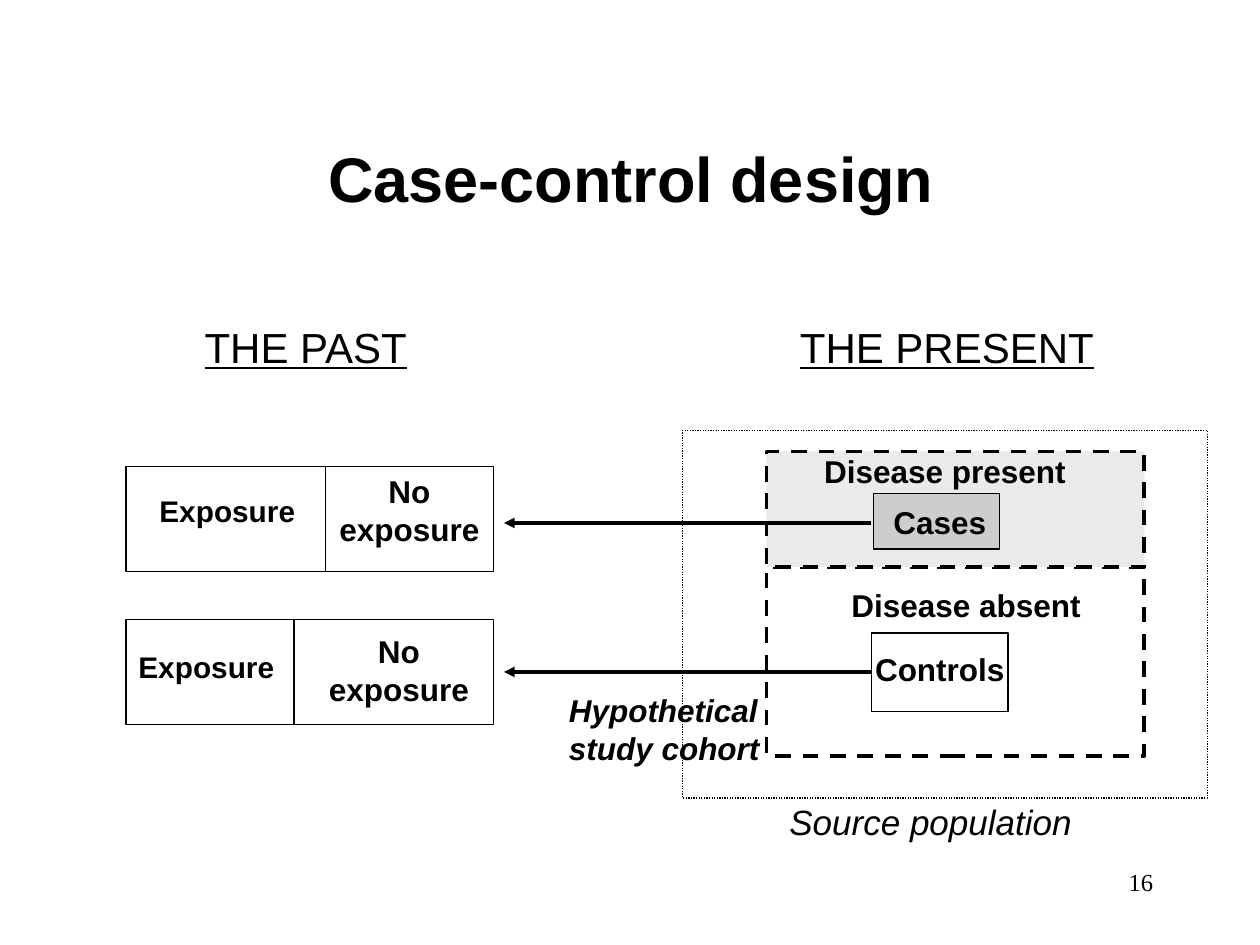
from pptx import Presentation
from pptx.dml.color import RGBColor
from pptx.enum.dml import MSO_LINE
from pptx.enum.shapes import MSO_CONNECTOR, MSO_SHAPE
from pptx.enum.text import MSO_ANCHOR, PP_ALIGN
from pptx.oxml.ns import qn
from pptx.util import Inches, Pt
from lxml.etree import SubElement

# Theme: colours, fonts, type styles and line widths
THEME = {
    "ink": "000000", "present": "EAEAEA", "cases": "B2B2B2", "cases_alpha": 50,
    "thin": 0.75, "arrow": 2, "cohort": 2.25,
    "styles": {
        "title": {"name": "Arial", "size": Pt(36), "bold": True},
        "heading": {"name": "Arial", "size": Pt(24), "underline": True},
        "exposure": {"name": "Arial", "size": Pt(17), "bold": True},
        "label": {"name": "Arial", "size": Pt(18), "bold": True},
        "cohort": {"name": "Arial", "size": Pt(18), "bold": True, "italic": True},
        "source": {"name": "Arial", "size": Pt(20), "italic": True},
        "number": {"name": "Times New Roman", "size": Pt(14)},
    },
}
LEFT, CENTER, RIGHT = PP_ALIGN.LEFT, PP_ALIGN.CENTER, PP_ALIGN.RIGHT
COLS, ROWS = 120, 90  # grid over the slide; every place below is in its cells

# Boxes: (left, top, width, height), line width, dash, fill, alpha
BOXES = [
    ((73, 54, 36, 18), "cohort", MSO_LINE.DASH, None, None),
    ((65, 41, 50, 35), "thin", MSO_LINE.ROUND_DOT, None, None),
    ((73, 43, 36, 11), "cohort", MSO_LINE.DASH, "present", None),
    ((83.2, 47, 12, 5.3), "thin", None, "cases", "cases_alpha"),
    ((83, 60.3, 13, 7.5), "thin", None, None, None),
]

# Past groups: top row, column of the divider, row of the arrow
PAST_LEFT, PAST_WIDTH, PAST_HEIGHT = 12, 35, 10
PAST = [(44.4, 31, 49.8), (59, 28, 64)]
ARROW_FROM, ARROW_TO = 83, 48

# Texts: words, (left, top, width, height), style, alignment, line spacing
TEXTS = [
    ("Case-control design", (11.9, 10.7, 96.4, 12.4), "title", CENTER, None),
    ("THE PAST", (18.3, 30, 27.7, 6), "heading", LEFT, None),
    ("THE PRESENT", (75, 30, 34, 6), "heading", LEFT, None),
    ("Exposure", (14, 46.3, 16, 4.5), "exposure", LEFT, None),
    ("No exposure", (30, 44.4, 18, 8.4), "label", CENTER, None),
    ("Exposure", (12, 61.2, 16, 4.5), "exposure", LEFT, None),
    ("No exposure", (29, 59.6, 18, 8.4), "label", CENTER, None),
    ("Disease present", (77, 43.2, 26, 4.1), "label", CENTER, 0.8),
    ("Cases", (82, 48, 15, 4.1), "label", CENTER, 0.8),
    ("Disease absent", (79, 55.9, 26, 4.1), "label", CENTER, 0.8),
    ("Controls", (82, 62, 15, 4.1), "label", CENTER, 0.8),
    ("Hypothetical study cohort", (53, 65.2, 21, 8.4), "cohort", LEFT, None),
    ("Source population", (74, 75.6, 31, 5.2), "source", LEFT, None),
    ("16", (86, 82, 25, 6), "number", RIGHT, None),
]

prs = Presentation()
prs.slide_width, prs.slide_height = Inches(10), Inches(7.5)
s = prs.slides.add_slide(prs.slide_layouts[6])


def place(*cells):
    units = (prs.slide_width / COLS, prs.slide_height / ROWS) * 2
    return [round(c * u) for c, u in zip(cells, units)]


def color(key):
    return RGBColor.from_string(THEME[key])


def style_line(sp, width, dash=None):
    sp.line.color.rgb = color("ink")
    sp.line.width = Pt(THEME[width])
    if dash:
        sp.line.dash_style = dash


def add_box(at, width="thin", dash=None, fill=None, alpha=None):
    sp = s.shapes.add_shape(MSO_SHAPE.RECTANGLE, *place(*at))
    sp.shadow.inherit = False
    style_line(sp, width, dash)
    if not fill:
        sp.fill.background()
        return
    sp.fill.solid()
    sp.fill.fore_color.rgb = color(fill)
    if alpha:
        clr = sp.fill._xPr.find(".//" + qn("a:srgbClr"))
        SubElement(clr, qn("a:alpha"), val=str(THEME[alpha] * 1000))


def add_line(ends, width="thin", arrow=False):
    sp = s.shapes.add_connector(MSO_CONNECTOR.STRAIGHT, *place(*ends))
    style_line(sp, width)
    if arrow:
        SubElement(sp.line._get_or_add_ln(), qn("a:tailEnd"), type="triangle")
    SubElement(sp._element.spPr, qn("a:effectLst"))


def add_text(words, at, style, align, spacing):
    tf = s.shapes.add_textbox(*place(*at)).text_frame
    tf.word_wrap = True
    tf.vertical_anchor = MSO_ANCHOR.MIDDLE if style == "title" else MSO_ANCHOR.TOP
    p = tf.paragraphs[0]
    p.alignment = align
    if spacing:
        p.line_spacing = spacing
    r = p.add_run()
    r.text = words
    r.font.color.rgb = color("ink")
    for attr, value in THEME["styles"][style].items():
        setattr(r.font, attr, value)


# Present: source population, cohort, cases and controls
for box in BOXES:
    add_box(*box)

# Past: divided exposure boxes, each reached by an arrow
for top, divider, arrow_row in PAST:
    add_box((PAST_LEFT, top, PAST_WIDTH, PAST_HEIGHT))
    add_line((divider, top, divider, top + PAST_HEIGHT))
    add_line((ARROW_FROM, arrow_row, ARROW_TO, arrow_row), "arrow", arrow=True)

# Title, headings and labels
for text in TEXTS:
    add_text(*text)

prs.save("out.pptx")
